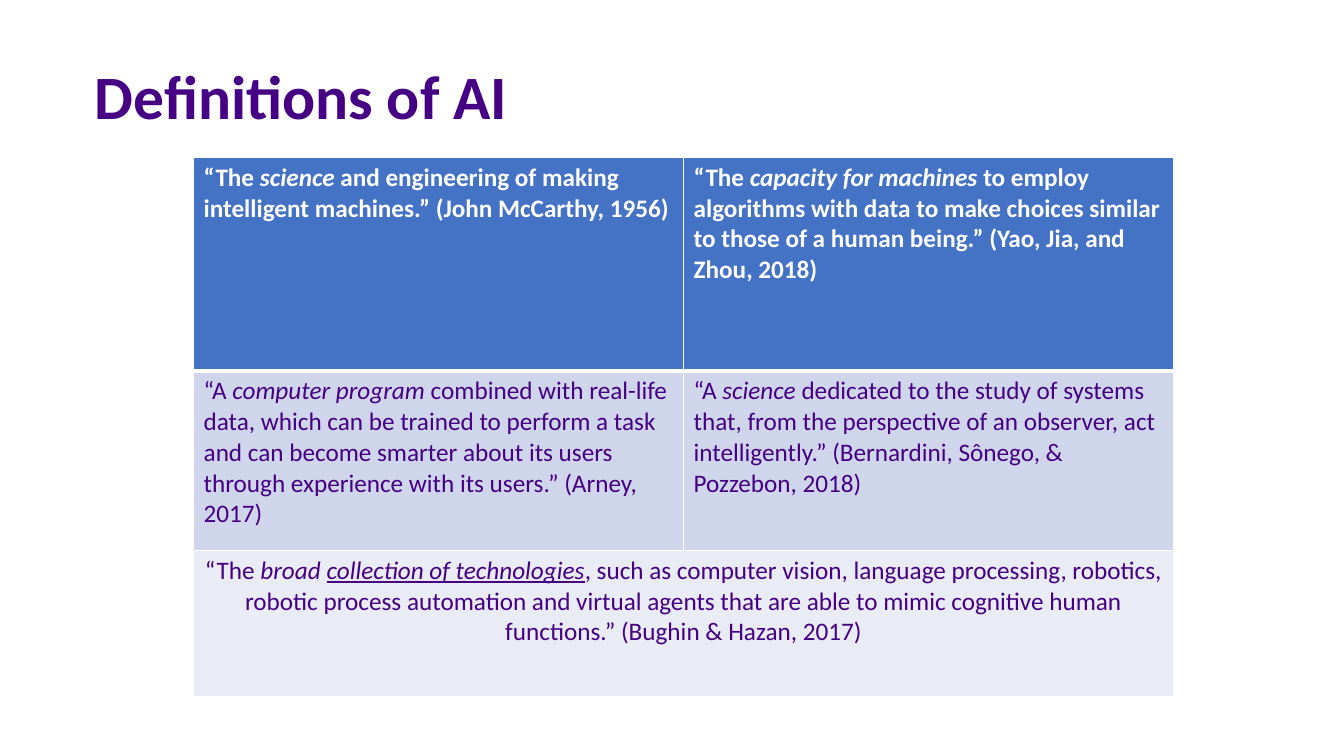
from lxml import etree
from pptx import Presentation
from pptx.dml.color import RGBColor
from pptx.enum.text import MSO_ANCHOR, PP_ALIGN
from pptx.oxml.ns import qn
from pptx.util import Inches, Pt

PURPLE = RGBColor(0x45, 0x00, 0x83)
WHITE = RGBColor(0xFF, 0xFF, 0xFF)
BLUE = RGBColor(0x44, 0x72, 0xC4)
PALE_BLUE = RGBColor(0xCF, 0xD5, 0xEA)
PALEST_BLUE = RGBColor(0xE9, 0xEB, 0xF5)


def add_run(p, text, size=18, color=PURPLE, bold=False, italic=False, underline=False):
    r = p.add_run()
    r.text = text
    f = r.font
    f.name, f.size, f.color.rgb = "Calibri", Pt(size), color
    f.bold, f.italic, f.underline = bold, italic, underline


def set_borders(cell, bottom):
    # Borders must precede the fill in the cell properties
    tc_pr = cell._tc.get_or_add_tcPr()
    for i, (side, width) in enumerate(zip("LRTB", (1, 1, 1, bottom))):
        ln = etree.Element(qn(f"a:ln{side}"), w=str(Pt(width)))
        fill = etree.SubElement(ln, qn("a:solidFill"))
        etree.SubElement(fill, qn("a:srgbClr"), val=str(WHITE))
        tc_pr.insert(i, ln)


prs = Presentation()
prs.slide_width, prs.slide_height = Inches(13.33), Inches(7.5)
s = prs.slides.add_slide(prs.slide_layouts[6])

# Title
tf = s.shapes.add_textbox(Inches(0.84), Inches(0.26), Inches(11.5), Inches(1.45)).text_frame
tf.word_wrap = True
tf.vertical_anchor = MSO_ANCHOR.MIDDLE
p = tf.paragraphs[0]
p.line_spacing = 0.9
add_run(p, "Definitions of AI", size=44, bold=True)

# Quotations: each is a list of (text, format) runs
ITALIC = {"italic": True}
quotes = [
    [
        [("“The ", {}), ("science ", ITALIC),
         ("and engineering of making intelligent machines.” (John McCarthy, 1956)", {})],
        [("“The ", {}), ("capacity for machines ", ITALIC),
         ("to employ algorithms with data to make choices similar to those of a "
          "human being.” (Yao, Jia, and Zhou, 2018)", {})],
    ],
    [
        [("“A ", {}), ("computer program ", ITALIC),
         ("combined with real-life data, which can be trained to perform a task and can "
          "become smarter about its users through experience with its users.” "
          "(Arney, 2017)", {})],
        [("“A ", {}), ("science ", ITALIC),
         ("dedicated to the study of systems that, from the perspective of an observer, "
          "act intelligently.” (Bernardini, Sônego, & Pozzebon, 2018)", {})],
    ],
    [
        [("“The ", {}), ("broad ", ITALIC),
         ("collection of technologies", {"italic": True, "underline": True}),
         (", such as computer vision, language processing, robotics, robotic process "
          "automation and virtual agents that are able to mimic cognitive human "
          "functions.” (Bughin & Hazan, 2017)", {})],
    ],
]

# Row height, fill, text format, alignment, bottom border
row_styles = [
    (2.12, BLUE, {"color": WHITE, "bold": True}, PP_ALIGN.LEFT, 3),
    (1.78, PALE_BLUE, {}, PP_ALIGN.LEFT, 1),
    (1.45, PALEST_BLUE, {}, PP_ALIGN.CENTER, 1),
]

# Table with a merged last row
table = s.shapes.add_table(3, 2, Inches(1.92), Inches(1.56), Inches(9.72), Inches(5.35)).table
table.cell(2, 0).merge(table.cell(2, 1))
for row, row_quotes, style in zip(table.rows, quotes, row_styles):
    height, fill, text_format, align, bottom = style
    row.height = Inches(height)
    for cell in row.cells:
        cell.fill.solid()
        cell.fill.fore_color.rgb = fill
        set_borders(cell, bottom)
    for cell, quote in zip(row.cells, row_quotes):
        p = cell.text_frame.paragraphs[0]
        p.alignment = align
        for text, emphasis in quote:
            add_run(p, text, **text_format, **emphasis)

# Row borders meet: the top of the second row matches the thick rule above it
for cell in table.rows[1].cells:
    cell._tc.tcPr.find(qn("a:lnT")).set("w", str(Pt(3)))

prs.save("out.pptx")
